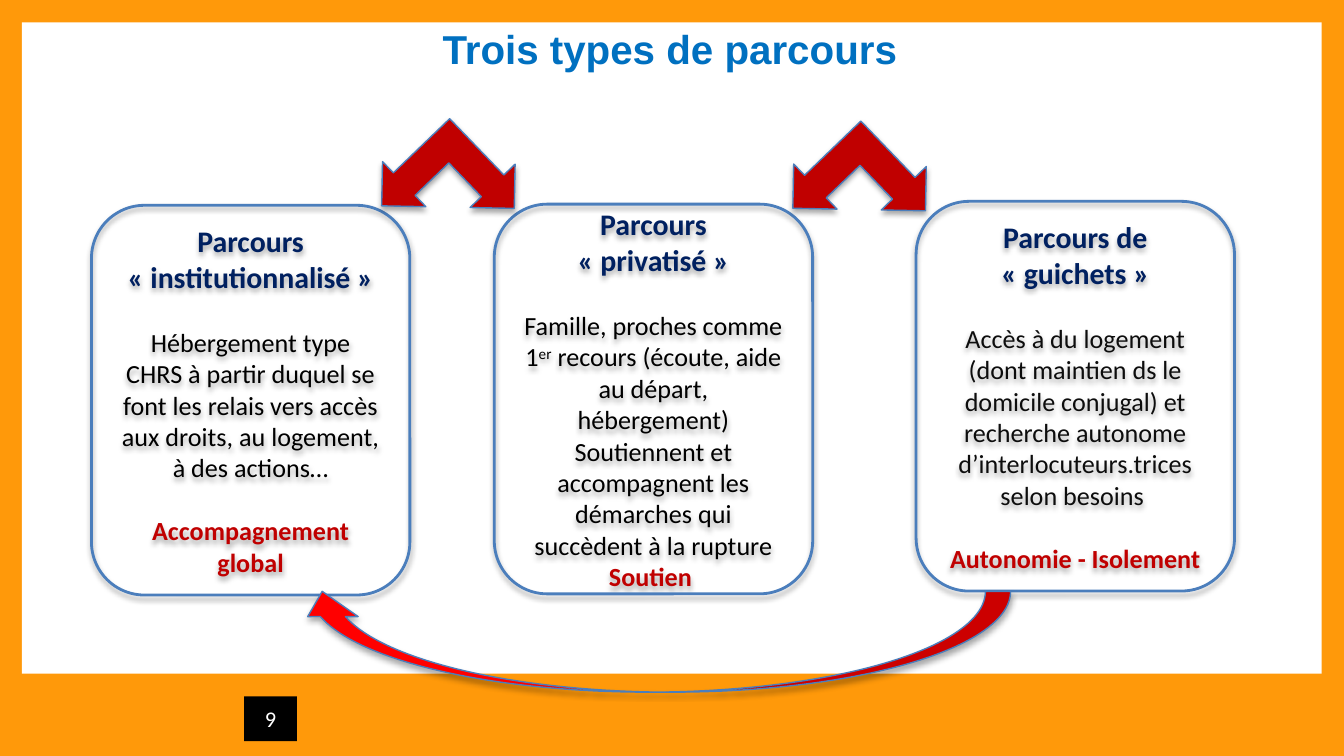
from lxml import etree
from pptx import Presentation
from pptx.dml.color import RGBColor
from pptx.enum.shapes import MSO_SHAPE
from pptx.enum.text import MSO_ANCHOR, MSO_AUTO_SIZE, PP_ALIGN
from pptx.oxml.ns import qn
from pptx.util import Pt

RECT, ROUND = MSO_SHAPE.RECTANGLE, MSO_SHAPE.ROUNDED_RECTANGLE
BENT, CURVE = MSO_SHAPE.LEFT_UP_ARROW, MSO_SHAPE.CURVED_DOWN_ARROW
MIDDLE, CENTER, FIXED = MSO_ANCHOR.MIDDLE, PP_ALIGN.CENTER, MSO_AUTO_SIZE.NONE

ORANGE, WHITE, BLACK, GREY = "FF990A", "FFFFFF", "000000", "0D0D0D"
BLUE, NAVY, RED, BRIGHT, EDGE = "0070C0", "002060", "C00000", "FF0000", "4B7EBC"
GAP = 17
BOX_W, BOX_H, BENT_W = 170.6, 208.8, 67

TITLE = "Trois types de parcours"
PATHS = [
    {"at": (49, 110), "head": "Parcours «\u00a0institutionnalisé\u00a0»", "color": BLACK,
     "body": ["Hébergement type CHRS à partir duquel se font les relais vers accès "
              "aux droits, au logement, à des actions…"],
     "end": "Accompagnement global", "gap": GAP},
    {"at": (264.8, 109.4), "head": "Parcours «\u00a0privatisé\u00a0»", "color": BLACK,
     "body": ["Famille, proches comme 1", "er",
              " recours (écoute, aide au départ, hébergement) Soutiennent et "
              "accompagnent les démarches qui succèdent à la rupture"],
     "end": "Soutien ", "gap": 0},
    {"at": (490.8, 107.9), "head": "Parcours de «\u00a0guichets\u00a0»", "color": GREY,
     "body": ["Accès à du logement (dont maintien ds le domicile conjugal) et "
              "recherche autonome d’interlocuteurs.trices selon besoins "],
     "end": "Autonomie - Isolement", "gap": GAP},
]
ARROWS = [
    (BENT, (206.7, 65.6, BENT_W, BENT_W), RED, 226.1),
    (BENT, (427, 66.9, BENT_W, BENT_W), RED, 226.1),
]
RETURN = (CURVE, (159.1, 316.8, 382.3, 54), BRIGHT, 180)


def rgb(code):
    """Turn a hex string into a colour."""
    return RGBColor.from_string(code)


def write(para, text, size=14, color=BLACK, bold=False, font="Calibri", gap=0, base=0):
    """Add a formatted run to a centred paragraph."""
    para.alignment = CENTER
    if gap:
        para.space_before = Pt(gap)
    run = para.add_run()
    run.text = text
    run.font.name, run.font.size, run.font.bold = font, Pt(size), bold
    run.font.color.rgb = rgb(color)
    if base:
        run.font._element.set("baseline", str(base * 1000))


def shade(shape):
    """Give a shape a soft shadow below it."""
    props = shape._element.spPr
    cast = etree.SubElement(props.find(qn("a:effectLst")), qn("a:outerShdw"),
                            blurRad=str(Pt(3.1)), dist=str(Pt(1.8)),
                            dir="5400000", rotWithShape="0")
    tint = etree.SubElement(cast, qn("a:srgbClr"), val=BLACK)
    etree.SubElement(tint, qn("a:alpha"), val="35000")


def draw(slide, kind, at, fill=None, width=0, turn=0):
    """Add a shape, outlined and shadowed when it has a line width."""
    shape = slide.shapes.add_shape(kind, *map(Pt, at))
    shape.rotation = turn
    shape.shadow.inherit = False
    if fill:
        shape.fill.solid()
        shape.fill.fore_color.rgb = rgb(fill)
    else:
        shape.fill.background()
    if width:
        shape.line.color.rgb = rgb(EDGE)
        shape.line.width = Pt(width)
        shade(shape)
    else:
        shape.line.fill.background()
    shape.text_frame.word_wrap = True
    shape.text_frame.vertical_anchor = MIDDLE
    return shape


def card(slide, item):
    """Draw one rounded box with its heading, body and closing line."""
    frame = draw(slide, ROUND, (*item["at"], BOX_W, BOX_H), width=1.5).text_frame
    write(frame.paragraphs[0], item["head"], size=16, color=NAVY, bold=True)
    body = frame.add_paragraph()
    for part in item["body"]:
        write(body, part, color=item["color"], gap=GAP, base=30 if part == "er" else 0)
    write(frame.add_paragraph(), item["end"], color=RED, bold=True, gap=item["gap"])


def main():
    """Build and save the slide."""
    deck = Presentation()
    deck.slide_width, deck.slide_height = Pt(720), Pt(405)
    slide = deck.slides.add_slide(deck.slide_layouts[5])
    slide.background.fill.solid()
    slide.background.fill.fore_color.rgb = rgb(ORANGE)
    draw(slide, RECT, (11.7, 12, 696.4, 349), WHITE)

    title = slide.shapes.title
    title.left, title.top, title.width, title.height = map(Pt, (9.4, 13.7, 699, 24))
    title.text_frame.auto_size = FIXED
    title.text_frame.vertical_anchor = MIDDLE
    write(title.text_frame.paragraphs[0], TITLE, size=21.6, color=BLUE, bold=True, font="Arial")
    slide.shapes.element.append(title.element)

    badge = draw(slide, RECT, (130.8, 373, 28.3, 24), BLACK)
    write(badge.text_frame.paragraphs[0], "9", size=12, color=WHITE)
    for item in PATHS:
        card(slide, item)
    for kind, at, fill, turn in [RETURN, *ARROWS]:
        draw(slide, kind, at, fill, width=0.75, turn=turn)
    deck.save("out.pptx")


if __name__ == "__main__":
    main()
